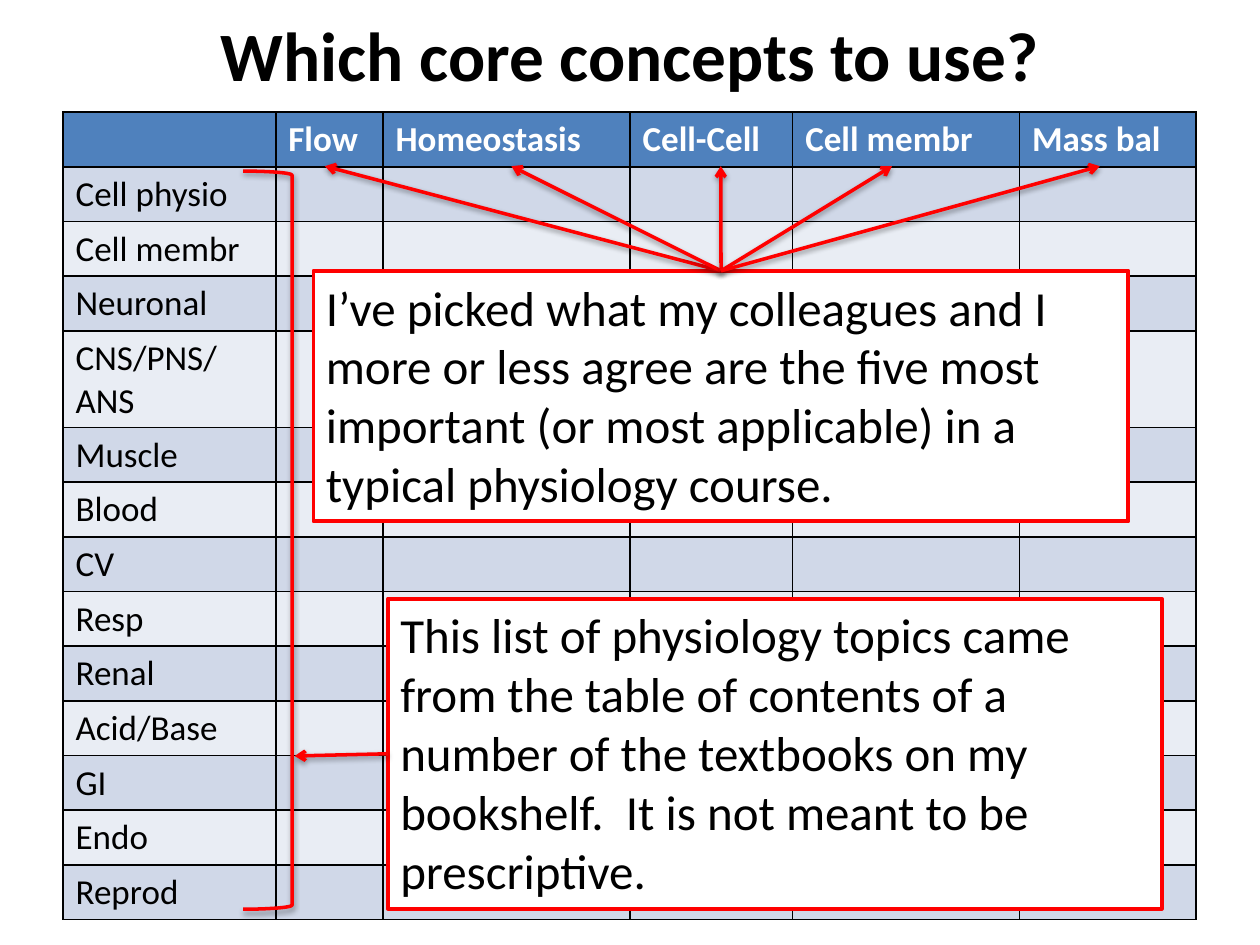
from pptx import Presentation
from pptx.dml.color import RGBColor
from pptx.enum.shapes import MSO_CONNECTOR, MSO_SHAPE
from pptx.enum.text import MSO_ANCHOR, MSO_AUTO_SIZE, PP_ALIGN
from pptx.oxml import parse_xml
from pptx.oxml.ns import nsdecls, qn
from pptx.util import Cm, Pt

STRAIGHT = MSO_CONNECTOR.STRAIGHT
BRACKET = MSO_SHAPE.RIGHT_BRACKET
MIDDLE = MSO_ANCHOR.MIDDLE
GROW = MSO_AUTO_SIZE.SHAPE_TO_FIT_TEXT
CENTER = PP_ALIGN.CENTER
TOP_SIDE, LEFT_SIDE = 0, 1

CONCEPTS = ["Flow", "Homeostasis", "Cell-Cell", "Cell membr", "Mass bal"]
TOPICS = ["Cell physio", "Cell membr", "Neuronal", "CNS/PNS/ANS", "Muscle", "Blood", "CV",
          "Resp", "Renal", "Acid/Base", "GI", "Endo", "Reprod"]
COLUMN_WIDTHS = [4.29, 2.16, 4.98, 3.28, 4.57, 3.56]
ROW_HEIGHT = 1.04
CONCEPT_ARROW_XS = [6.55, 10.31, 14.53, 17.98, 22.17]
CONCEPT_ARROW_Y = 3.35


def rgb(value):
    return RGBColor.from_string(value)


class ConceptSlide:
    """Holds the style and the current slide, and draws each kind of element."""

    ACCENT, INK, PAPER = "FF0000", "000000", "FFFFFF"
    HEADER, BANDS = "4F81BD", ("E9EDF4", "D0D8E8")
    TITLE_FONT = {"name": "Calibri", "size": Pt(39.6), "bold": True}
    HEADER_FONT = {"name": "Calibri", "size": Pt(20), "bold": True}
    TOPIC_FONT = {"name": "Calibri", "size": Pt(20), "bold": False}
    NOTE_FONT = {"name": "Calibri", "size": Pt(28)}

    def __init__(self, presentation):
        self.slide = presentation.slides.add_slide(presentation.slide_layouts[6])

    def set_text(self, frame, text, font_format, color):
        frame.word_wrap = True
        paragraph = frame.paragraphs[0]
        paragraph.text = text
        for attribute, value in font_format.items():
            setattr(paragraph.font, attribute, value)
        paragraph.font.color.rgb = rgb(color)
        return paragraph

    def outline(self, shape, width):
        shape.line.color.rgb = rgb(self.ACCENT)
        shape.line.width = Pt(width)

    def add_shadow(self, shape):
        shape._element.spPr.append(parse_xml(
            f'<a:effectLst {nsdecls("a")}>'
            '<a:outerShdw blurRad="40000" dist="20000" dir="5400000" rotWithShape="0">'
            f'<a:srgbClr val="{self.INK}"><a:alpha val="38000"/></a:srgbClr>'
            '</a:outerShdw></a:effectLst>'))

    def title(self, text, *box):
        frame = self.slide.shapes.add_textbox(*map(Cm, box)).text_frame
        frame.vertical_anchor = MIDDLE
        self.set_text(frame, text, self.TITLE_FONT, self.INK).alignment = CENTER

    def cell(self, cell, text, font_format, color, fill):
        self.set_text(cell.text_frame, text, font_format, color)
        cell.fill.solid()
        cell.fill.fore_color.rgb = rgb(fill)
        properties = cell._tc.get_or_add_tcPr()
        for position, side in enumerate("LRTB"):
            properties.insert(position, parse_xml(
                f'<a:ln{side} {nsdecls("a")} w="12700"><a:solidFill>'
                f'<a:srgbClr val="{self.INK}"/></a:solidFill></a:ln{side}>'))

    def matrix(self, left, top, concepts, topics):
        rows, columns = len(topics) + 1, len(concepts) + 1
        table = self.slide.shapes.add_table(
            rows, columns, Cm(left), Cm(top),
            Cm(sum(COLUMN_WIDTHS)), Cm(ROW_HEIGHT * rows)).table
        for column, width in zip(table.columns, COLUMN_WIDTHS):
            column.width = Cm(width)
        for index, concept in enumerate([""] + concepts):
            self.cell(table.cell(0, index), concept, self.HEADER_FONT, self.PAPER, self.HEADER)
        for row, topic in enumerate(topics, start=1):
            for index, text in enumerate([topic] + [""] * len(concepts)):
                self.cell(table.cell(row, index), text, self.TOPIC_FONT, self.INK,
                          self.BANDS[row % 2])

    def note(self, text, *box):
        note = self.slide.shapes.add_textbox(*map(Cm, box))
        note.fill.solid()
        note.fill.fore_color.rgb = rgb(self.PAPER)
        self.outline(note, 2.25)
        self.set_text(note.text_frame, text, self.NOTE_FONT, self.INK)
        note.text_frame.auto_size = GROW
        return note

    def bracket(self, *box):
        bracket = self.slide.shapes.add_shape(BRACKET, *map(Cm, box))
        bracket.fill.background()
        self.outline(bracket, 2)
        self.add_shadow(bracket)

    def arrow(self, note, side, x, y):
        arrow = self.slide.shapes.add_connector(STRAIGHT, note.left, note.top, Cm(x), Cm(y))
        arrow.begin_connect(note, side)
        self.outline(arrow, 2)
        arrow._element.spPr.find(qn("a:ln")).append(
            parse_xml(f'<a:tailEnd {nsdecls("a")} type="arrow"/>'))
        self.add_shadow(arrow)


def main():
    presentation = Presentation()
    presentation.slide_width, presentation.slide_height = Cm(25.4), Cm(19.05)
    page = ConceptSlide(presentation)
    page.title("Which core concepts to use?", 1.27, 0.2, 22.86, 1.75)
    page.matrix(1.27, 2.26, CONCEPTS, TOPICS)

    topics_note = page.note(
        "This list of physiology topics came from the table of contents of a number of the "
        "textbooks on my bookshelf.  It is not meant to be prescriptive.",
        7.82, 12.07, 15.6, 6.25)
    page.bracket(4.9, 3.45, 0.99, 14.88)
    page.arrow(topics_note, LEFT_SIDE, 5.94, 15.24)

    concepts_note = page.note(
        "I’ve picked what my colleagues and I more or less agree are the five most important "
        "(or most applicable) in a typical physiology course.",
        6.32, 5.46, 16.43, 5.05)
    for x in CONCEPT_ARROW_XS:
        page.arrow(concepts_note, TOP_SIDE, x, CONCEPT_ARROW_Y)

    presentation.save("out.pptx")


if __name__ == "__main__":
    main()
